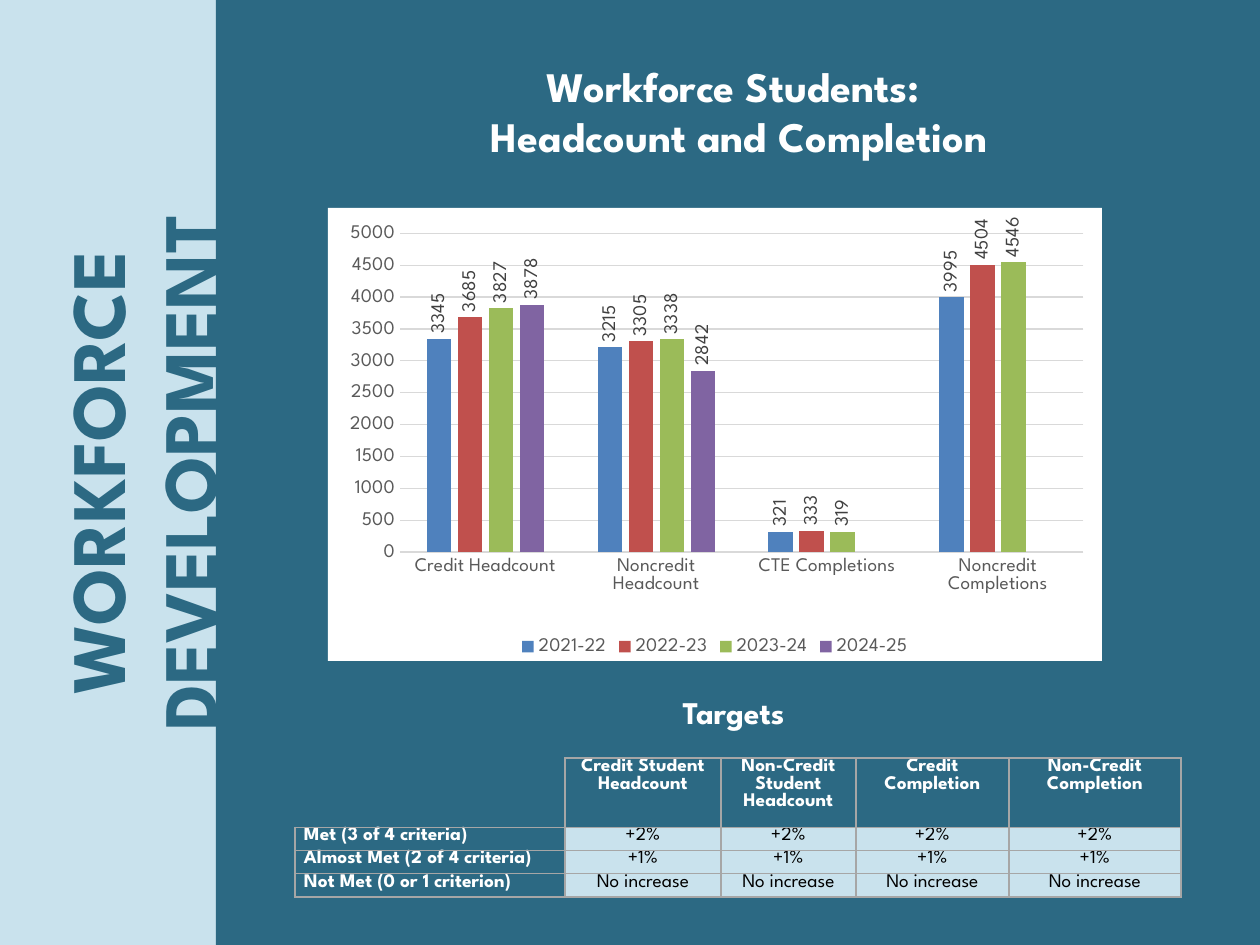
"""Build the workforce headcount and completion slide."""
from lxml import etree
from pptx import Presentation
from pptx import util as u
from pptx.chart.data import CategoryChartData
from pptx.dml.color import RGBColor
from pptx.enum import chart as ch, shapes, text
from pptx.oxml import parse_xml
from pptx.oxml.ns import nsdecls, qn

PX = 914400 // 126
FONT = "League Spartan"
HEX = {"pale": "C9E2ED", "teal": "2C6983", "white": "FFFFFF", "black": "000000",
       "rule": "A6A6A6", "grid": "D9D9D9", "axis": "595959", "label": "404040"}
BANDS = [("pale", 0, 216), ("teal", 216, 1044)]
TEXTS = [
    (["WORKFORCE DEVELOPMENT"], (-331, 373, 945, 199), 270, 44, "teal"),
    (["Workforce Students: ", "Headcount and Completion"], (257, 54, 964, 115), 0, 24, "white"),
    (["Targets"], (496, 687, 475, 52), 0, 18, "white"),
]
CATS = ["Credit Headcount", "Noncredit Headcount", "CTE Completions", "Noncredit Completions"]
SERIES = [
    ("2021-22", "4F81BD", [3345, 3215, 321, 3995]),
    ("2022-23", "C0504D", [3685, 3305, 333, 4504]),
    ("2023-24", "9BBB59", [3827, 3338, 319, 4546]),
    ("2024-25", "8064A2", [3878, 2842, None, None]),
]
PLOT = {"x": 0.093, "y": 0.056, "w": 0.883, "h": 0.704}
TARGETS = [
    ["", "Credit Student Headcount", "Non-Credit Student Headcount",
     "Credit Completion", "Non-Credit Completion"],
    ["Met (3 of 4 criteria)"] + ["+2%"] * 4,
    ["Almost Met (2 of 4 criteria)"] + ["+1%"] * 4,
    ["Not Met (0 or 1 criterion)"] + ["No increase"] * 4,
]
COLS = [270, 156, 135, 153, 172]
ROWS = [69, 23, 23, 23]


def px(*nums):
    return [n * PX for n in nums]


def rgb(name):
    return RGBColor.from_string(HEX.get(name, name))


def paint(part, name):
    part.fill.solid()
    part.fill.fore_color.rgb = rgb(name)


def style(font, size, color, bold=False):
    font.name, font.size, font.bold = FONT, u.Pt(size), bold
    font.color.rgb = rgb(color)


def write(para, words, size, color, bold, align):
    para.alignment = align
    run = para.add_run()
    run.text = words
    style(run.font, size, color, bold)


def add_band(slide, color, left, width):
    band = slide.shapes.add_shape(shapes.MSO_SHAPE.RECTANGLE, *px(left, 0, width, 945))
    band.shadow.inherit = False
    band.line.fill.background()
    paint(band, color)


def add_text(slide, lines, place, turn, size, color):
    box = slide.shapes.add_textbox(*px(*place))
    box.rotation = turn
    frame = box.text_frame
    frame.word_wrap = True
    for i, line in enumerate(lines):
        para = frame.paragraphs[0] if i == 0 else frame.add_paragraph()
        write(para, line, size, color, True, text.PP_ALIGN.CENTER)


def add_bars(slide):
    data = CategoryChartData(number_format="0")
    data.categories = CATS
    for name, _, vals in SERIES:
        data.add_series(name, vals)
    kind = ch.XL_CHART_TYPE.COLUMN_CLUSTERED
    chart = slide.shapes.add_chart(kind, *px(328, 208, 774, 453), data).chart
    style(chart.font, 11, "black")
    chart.has_title = False
    chart.has_legend = True
    chart.legend.position = ch.XL_LEGEND_POSITION.BOTTOM
    chart.legend.include_in_layout = False
    style(chart.legend.font, 11, "axis")

    cat, val = chart.category_axis, chart.value_axis
    for axis in (cat, val):
        axis.major_tick_mark = axis.minor_tick_mark = ch.XL_TICK_MARK.NONE
        style(axis.tick_labels.font, 11, "axis")
    val.minimum_scale, val.maximum_scale, val.major_unit = 0, 5000, 500
    val.format.line.fill.background()
    val.has_major_gridlines = True
    for line in (cat.format.line, val.major_gridlines.format.line):
        line.color.rgb = rgb("grid")
        line.width = u.Pt(0.75)

    plot = chart.plots[0]
    plot.gap_width, plot.overlap, plot.vary_by_categories = 219, -27, False
    for bars, (_, color, _) in zip(plot.series, SERIES):
        paint(bars.format, color)
        bars.invert_if_negative = False
        tags = bars.data_labels
        tags.show_value = True
        tags.position = ch.XL_LABEL_POSITION.OUTSIDE_END
        tags.number_format, tags.number_format_is_linked = "0", False
        style(tags.font, 11, "label")
        body = tags._element.find(".//" + qn("a:bodyPr"))
        body.set("rot", "-5400000")
        body.set("vert", "horz")

    area = chart._chartSpace.chart.plotArea
    for old in area.findall(qn("c:layout")):
        area.remove(old)
    modes = '<c:layoutTarget val="inner"/><c:xMode val="edge"/><c:yMode val="edge"/>'
    sizes = "".join(f'<c:{k} val="{v}"/>' for k, v in PLOT.items())
    area.insert(0, parse_xml(f'<c:layout {nsdecls("c")}><c:manualLayout>{modes}{sizes}'
                             '</c:manualLayout></c:layout>'))
    back = parse_xml(f'<c:spPr {nsdecls("c", "a")}><a:solidFill><a:srgbClr val="{HEX["white"]}"/>'
                     '</a:solidFill><a:ln><a:noFill/></a:ln></c:spPr>')
    chart._chartSpace.chart.addnext(back)


def edge(cell, bare):
    props = cell._tc.get_or_add_tcPr()
    for i, side in enumerate(("lnL", "lnR", "lnT", "lnB")):
        line = etree.Element(qn("a:" + side), w=str(u.Pt(1)))
        if side in bare:
            etree.SubElement(line, qn("a:noFill"))
        else:
            fill = etree.SubElement(line, qn("a:solidFill"))
            etree.SubElement(fill, qn("a:srgbClr"), val=HEX["rule"])
        props.insert(i, line)


def add_targets(slide):
    place = px(295, 758, sum(COLS), sum(ROWS))
    table = slide.shapes.add_table(len(ROWS), len(COLS), *place).table
    table.horz_banding = table.first_row = False
    for col, width in zip(table.columns, COLS):
        col.width = width * PX
    for row, high in zip(table.rows, ROWS):
        row.height = high * PX
    for r, line in enumerate(TARGETS):
        for c, words in enumerate(line):
            cell = table.cell(r, c)
            head = r == 0 or c == 0
            cell.margin_left = cell.margin_right = 9 * PX
            cell.margin_top = cell.margin_bottom = 0
            paint(cell, "teal" if head else "pale")
            edge(cell, ("lnL", "lnT") if r == c == 0 else ())
            if words:
                align = text.PP_ALIGN.CENTER if c else text.PP_ALIGN.LEFT
                write(cell.text_frame.paragraphs[0], words, 11,
                      "white" if head else "black", head, align)


def main():
    deck = Presentation()
    deck.slide_width, deck.slide_height = px(1260, 945)
    slide = deck.slides.add_slide(deck.slide_layouts[6])
    for band in BANDS:
        add_band(slide, *band)
    for item in TEXTS:
        add_text(slide, *item)
    add_bars(slide)
    add_targets(slide)
    deck.save("out.pptx")


if __name__ == "__main__":
    main()
